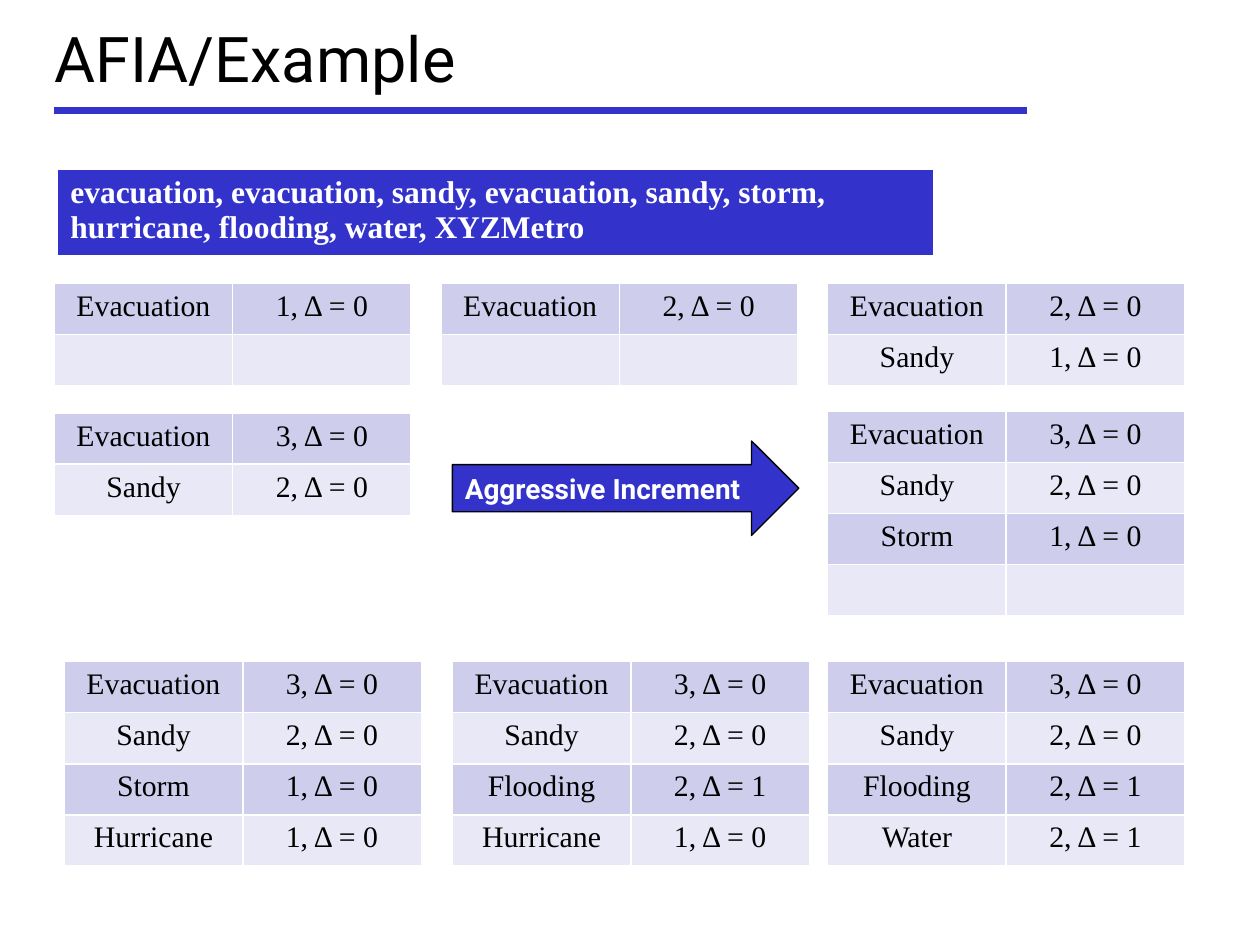
from dataclasses import dataclass

from lxml import etree
from pptx import Presentation
from pptx import util as u
from pptx.dml.color import RGBColor
from pptx.enum import shapes, text
from pptx.oxml import ns

Pt = u.Pt


@dataclass(frozen=True)
class Theme:
    accent: str = "3333CC"
    dark_band: str = "CECEEC"
    light_band: str = "E8E8F6"
    ink: str = "000000"
    paper: str = "FFFFFF"
    heading_font: str = "Roboto"
    body_font: str = "Times New Roman"
    title_size: float = 36
    stream_size: float = 18
    count_size: float = 17
    label_size: float = 16


THEME = Theme()
COLUMN_WIDTH, ROW_HEIGHT = 102, 29.25
TOP_COLUMNS = (31, 252, 473)
BOTTOM_COLUMNS = (36.75, 258.5, 473)

STREAM = ("evacuation, evacuation, sandy, evacuation, sandy, storm, "
          "hurricane, flooding, water, XYZMetro")
EMPTY = ("", "")
EVACUATION = ("Evacuation", "3, Δ = 0")
SANDY = ("Sandy", "2, Δ = 0")
STORM = ("Storm", "1, Δ = 0")
HURRICANE = ("Hurricane", "1, Δ = 0")
FLOODING = ("Flooding", "2, Δ = 1")
WATER = ("Water", "2, Δ = 1")

# Left, top and rows of each step's counter table
COUNTERS = [
    (TOP_COLUMNS[0], 162, [("Evacuation", "1, Δ = 0"), EMPTY]),
    (TOP_COLUMNS[1], 162, [("Evacuation", "2, Δ = 0"), EMPTY]),
    (TOP_COLUMNS[2], 162, [("Evacuation", "2, Δ = 0"), ("Sandy", "1, Δ = 0")]),
    (TOP_COLUMNS[0], 236, [EVACUATION, SANDY]),
    (TOP_COLUMNS[2], 235, [EVACUATION, SANDY, STORM, EMPTY]),
    (BOTTOM_COLUMNS[0], 378, [EVACUATION, SANDY, STORM, HURRICANE]),
    (BOTTOM_COLUMNS[1], 378, [EVACUATION, SANDY, FLOODING, HURRICANE]),
    (BOTTOM_COLUMNS[2], 378, [EVACUATION, SANDY, FLOODING, WATER]),
]


def color(value):
    return RGBColor.from_string(value)


def write_text(frame, content, *, size, font, ink, bold=False,
               align=text.PP_ALIGN.LEFT):
    paragraph = frame.paragraphs[0]
    paragraph.alignment = align
    run = paragraph.add_run()
    run.text = content
    run.font.size = Pt(size)
    run.font.name = font
    run.font.bold = bold
    run.font.color.rgb = color(ink)


def set_borders(cell, bottom_width):
    properties = cell._tc.get_or_add_tcPr()
    for side, width in zip("LRTB", (1, 1, 1, bottom_width)):
        line = etree.SubElement(properties, ns.qn(f"a:ln{side}"), w=str(Pt(width)))
        fill = etree.SubElement(line, ns.qn("a:solidFill"))
        etree.SubElement(fill, ns.qn("a:srgbClr"), val=THEME.paper)


def add_grid(slide, box, rows, fills, bottom_width=1, **text_format):
    """Place a table with equal cells; row fills repeat in turn."""
    left, top, width, height = box
    table = slide.shapes.add_table(
        len(rows), len(rows[0]), Pt(left), Pt(top), Pt(width), Pt(height)).table
    table.first_row = table.horz_banding = False
    for row_index, row in enumerate(rows):
        table.rows[row_index].height = Pt(height / len(rows))
        for column_index, content in enumerate(row):
            cell = table.cell(row_index, column_index)
            set_borders(cell, bottom_width)
            cell.fill.solid()
            cell.fill.fore_color.rgb = color(fills[row_index % len(fills)])
            if content:
                write_text(cell.text_frame, content, **text_format)


def add_title(slide, box):
    left, top, width, height = box
    title = slide.shapes.add_textbox(Pt(left), Pt(top), Pt(width), Pt(height))
    title.text_frame.word_wrap = True
    title.text_frame.vertical_anchor = text.MSO_ANCHOR.MIDDLE
    write_text(title.text_frame, "AFIA/Example", size=THEME.title_size,
               font=THEME.heading_font, ink=THEME.ink)
    # Rule under the title, starting at the text's left edge
    rule_left, rule_top = left + 7, top + height + 0.5
    rule = slide.shapes.add_connector(
        shapes.MSO_CONNECTOR.STRAIGHT, Pt(rule_left), Pt(rule_top),
        Pt(rule_left + 556), Pt(rule_top))
    rule.line.color.rgb = color(THEME.accent)
    rule.line.width = Pt(4)
    etree.SubElement(rule._element.spPr, ns.qn("a:effectLst"))


def add_stream(slide, box):
    add_grid(slide, box, [(STREAM,)], [THEME.accent], bottom_width=3,
             size=THEME.stream_size, font=THEME.body_font, ink=THEME.paper,
             bold=True)


def add_counter(slide, box, rows):
    add_grid(slide, box, rows, [THEME.dark_band, THEME.light_band],
             size=THEME.count_size, font=THEME.body_font, ink=THEME.ink,
             align=text.PP_ALIGN.CENTER)


def add_increment_arrow(slide, box):
    arrow = slide.shapes.add_shape(
        shapes.MSO_SHAPE.RIGHT_ARROW, *(Pt(length) for length in box))
    arrow.shadow.inherit = False
    arrow.fill.solid()
    arrow.fill.fore_color.rgb = color(THEME.accent)
    arrow.line.color.rgb = color(THEME.ink)
    arrow.line.width = Pt(0.75)
    arrow.text_frame.word_wrap = True
    arrow.text_frame.vertical_anchor = text.MSO_ANCHOR.MIDDLE
    write_text(arrow.text_frame, "Aggressive Increment", size=THEME.label_size,
               font=THEME.heading_font, ink=THEME.paper, bold=True)


def main():
    presentation = Presentation()
    presentation.slide_width, presentation.slide_height = Pt(720), Pt(540)
    slide = presentation.slides.add_slide(presentation.slide_layouts[6])

    add_title(slide, (24, 3, 574.5, 59.75))
    add_stream(slide, (33, 96.5, 500.5, 48))
    for left, top, rows in COUNTERS:
        box = (left, top, 2 * COLUMN_WIDTH, len(rows) * ROW_HEIGHT)
        add_counter(slide, box, rows)
    add_increment_arrow(slide, (258.5, 252, 198, 54))

    presentation.save("out.pptx")


if __name__ == "__main__":
    main()
